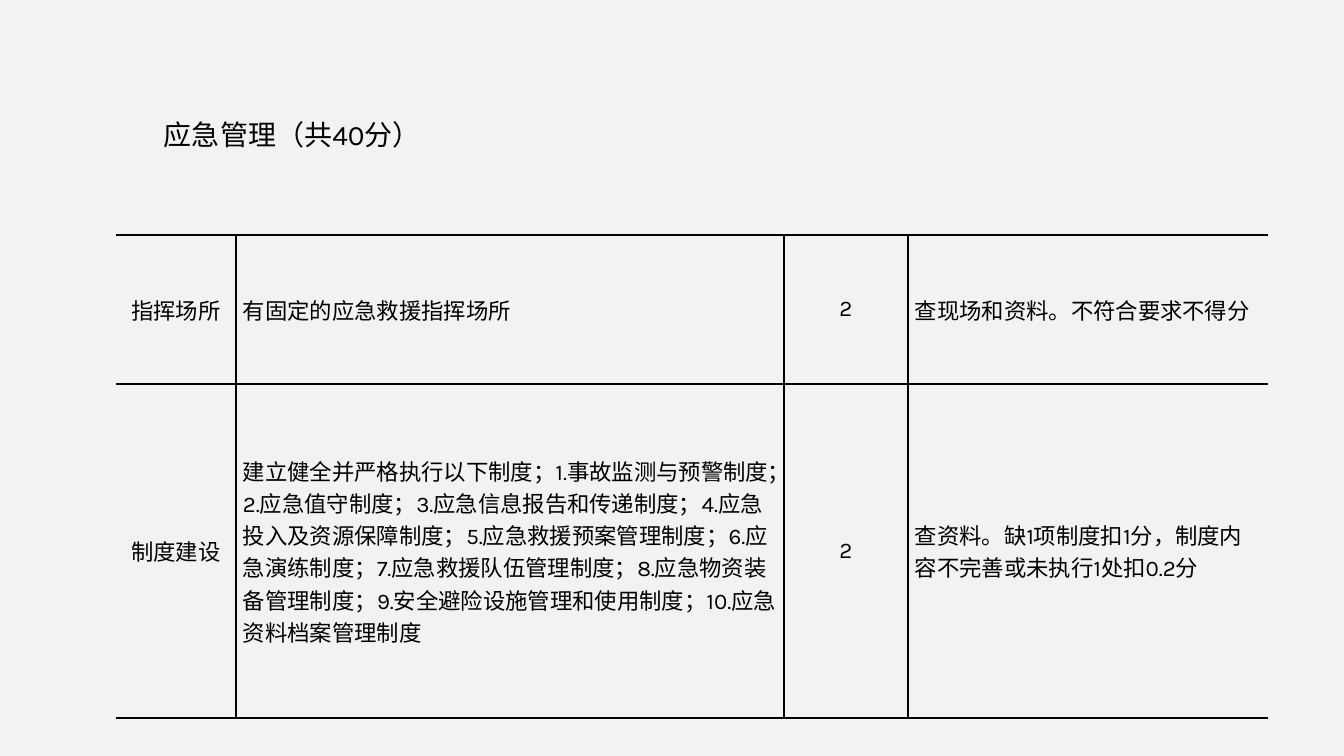
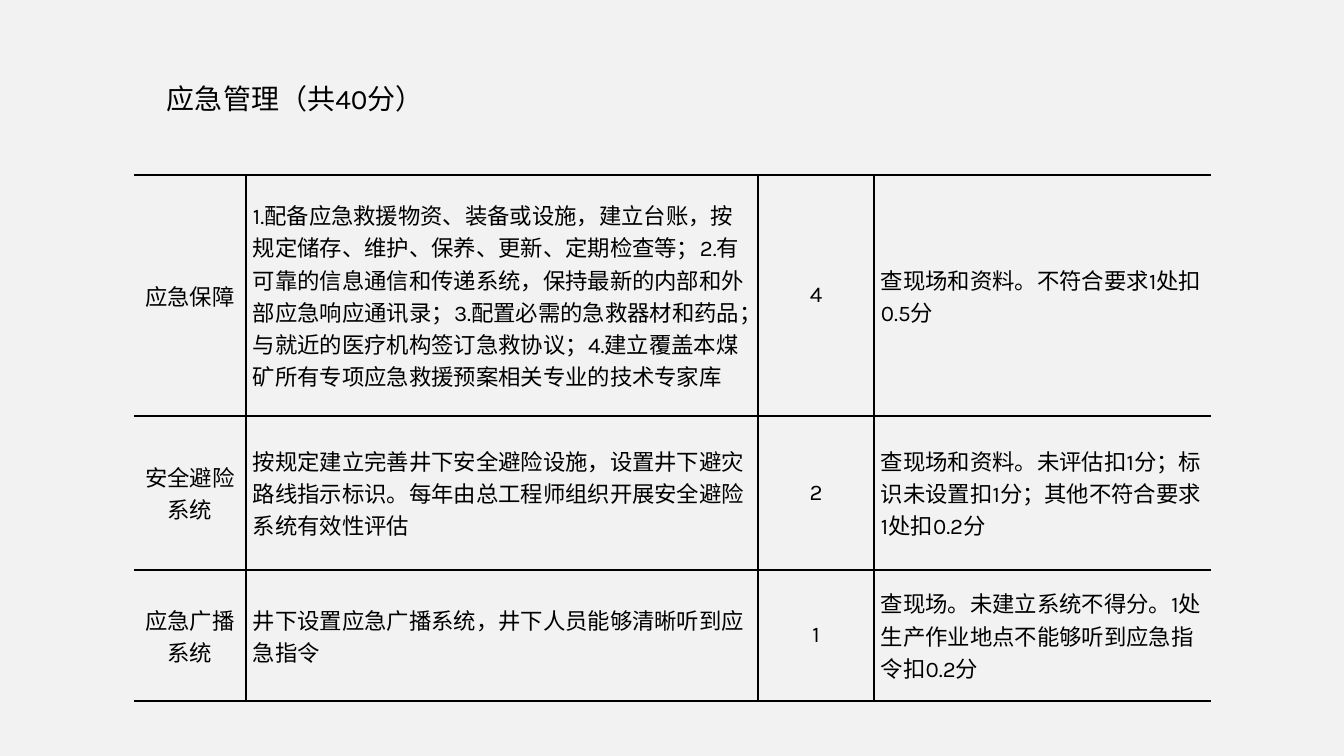
from lxml import etree
from pptx import Presentation
from pptx.dml.color import RGBColor
from pptx.enum.lang import MSO_LANGUAGE_ID
from pptx.enum.text import MSO_ANCHOR, PP_ALIGN
from pptx.oxml.ns import qn
from pptx.util import Pt

BLACK = RGBColor(0x00, 0x00, 0x00)
PALE_GREY = RGBColor(0xF2, 0xF2, 0xF2)
CENTER, LEFT = PP_ALIGN.CENTER, PP_ALIGN.LEFT
MIDDLE = MSO_ANCHOR.MIDDLE
CHINESE = MSO_LANGUAGE_ID.SIMPLIFIED_CHINESE
FONT = "Karla"
EMU_PER_PX = 914400 / 100.8
COLUMN_ALIGNS = (CENTER, LEFT, CENTER, LEFT)
TITLE = "应急管理（共40分）"


def px(length):
    return round(length * EMU_PER_PX)


class Deck:
    def __init__(self):
        self.deck = Presentation()
        self.deck.slide_width = px(1344)
        self.deck.slide_height = px(756)
        self.page = None

    def add_page(self):
        self.page = self.deck.slides.add_slide(self.deck.slide_layouts[6])
        fill = self.page.background.fill
        fill.solid()
        fill.fore_color.rgb = PALE_GREY

    def set_text(self, frame, text, size, align=LEFT):
        frame.word_wrap = True
        frame.text = text
        para = frame.paragraphs[0]
        para.alignment = align
        font = para.runs[0].font
        font.name = FONT
        font.size = Pt(size)
        font.color.rgb = BLACK
        font.language_id = CHINESE

    def add_title(self, text, left, top):
        box = self.page.shapes.add_textbox(px(left), px(top), px(868), px(44))
        box.text_frame.margin_left = px(21)
        self.set_text(box.text_frame, text, 20)

    def add_border(self, cell, side, visible):
        line = etree.SubElement(cell._tc.get_or_add_tcPr(), qn(f"a:ln{side}"), w=str(Pt(1)))
        if visible:
            fill = etree.SubElement(line, qn("a:solidFill"))
            etree.SubElement(fill, qn("a:srgbClr"), val=str(BLACK))
        else:
            etree.SubElement(line, qn("a:noFill"))

    def add_score_table(self, left, top, widths, heights, rows):
        frame = self.page.shapes.add_table(
            len(rows), len(widths), px(left), px(top), px(sum(widths)), px(sum(heights)))
        table = frame.table
        table.first_row = False
        table.horz_banding = False
        for column, width in zip(table.columns, widths):
            column.width = px(width)
        for row, height, texts in zip(table.rows, heights, rows):
            row.height = px(height)
            for index, (cell, text) in enumerate(zip(row.cells, texts)):
                cell.margin_left = cell.margin_right = px(7)
                cell.margin_top = cell.margin_bottom = 0
                cell.vertical_anchor = MIDDLE
                self.set_text(cell.text_frame, text, 16, COLUMN_ALIGNS[index])
                self.add_border(cell, "L", index > 0)
                self.add_border(cell, "R", index < len(widths) - 1)
                self.add_border(cell, "T", True)
                self.add_border(cell, "B", True)
                cell.fill.background()

    def save(self):
        self.deck.save("out.pptx")


def main():
    deck = Deck()

    deck.add_page()
    deck.add_score_table(116, 235, (120, 548, 124, 360), (149, 334), (
        ("指挥场所", "有固定的应急救援指挥场所", "2", "查现场和资料。不符合要求不得分"),
        ("制度建设",
         "建立健全并严格执行以下制度；1.事故监测与预警制度；2.应急值守制度；"
         "3.应急信息报告和传递制度；4.应急投入及资源保障制度；5.应急救援预案管理制度；"
         "6.应急演练制度；7.应急救援队伍管理制度；8.应急物资装备管理制度；"
         "9.安全避险设施管理和使用制度；10.应急资料档案管理制度",
         "2", "查资料。缺1项制度扣1分，制度内容不完善或未执行1处扣0.2分"),
    ))
    deck.add_title(TITLE, 143, 113)

    deck.add_page()
    deck.add_score_table(134, 175, (112, 512, 116, 337), (241, 154, 131), (
        ("应急保障",
         "1.配备应急救援物资、装备或设施，建立台账，按规定储存、维护、保养、更新、定期检查等；"
         "2.有可靠的信息通信和传递系统，保持最新的内部和外部应急响应通讯录；"
         "3.配置必需的急救器材和药品；与就近的医疗机构签订急救协议；"
         "4.建立覆盖本煤矿所有专项应急救援预案相关专业的技术专家库",
         "4", "查现场和资料。不符合要求1处扣0.5分"),
        ("安全避险系统",
         "按规定建立完善井下安全避险设施，设置井下避灾路线指示标识。"
         "每年由总工程师组织开展安全避险系统有效性评估",
         "2", "查现场和资料。未评估扣1分；标识未设置扣1分；其他不符合要求1处扣0.2分"),
        ("应急广播系统", "井下设置应急广播系统，井下人员能够清晰听到应急指令",
         "1", "查现场。未建立系统不得分。1处生产作业地点不能够听到应急指令扣0.2分"),
    ))
    deck.add_title(TITLE, 146, 77)

    deck.save()


if __name__ == "__main__":
    main()
